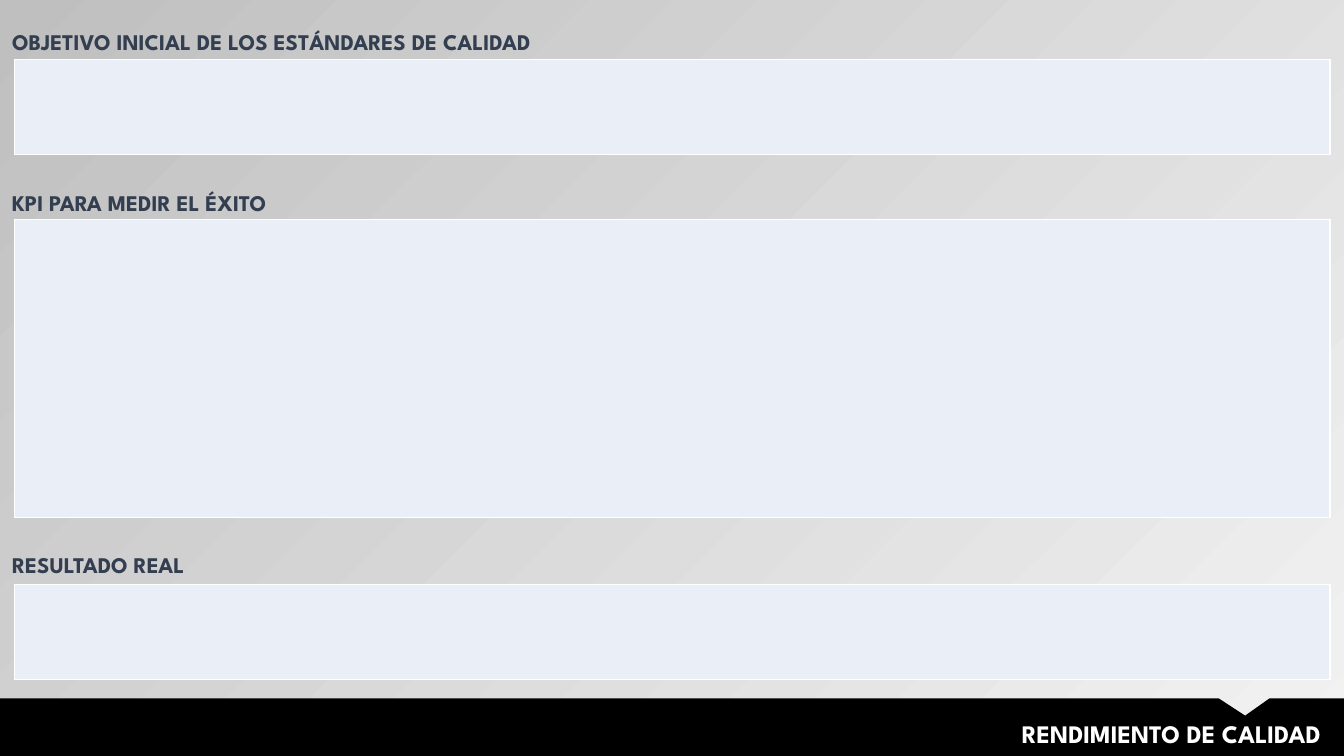
from pptx import Presentation
from pptx.dml.color import RGBColor
from pptx.enum.text import MSO_AUTO_SIZE, PP_ALIGN
from pptx.oxml import parse_xml
from pptx.oxml.ns import nsdecls
from pptx.util import Inches, Pt

FONT = "League Spartan"
BLACK, WHITE, SLATE, PALE = "000000", "FFFFFF", "333F50", "EAEFF7"
BACKGROUND = ["F2F2F2", "BFBFBF"]
TITLE = "RENDIMIENTO DE CALIDAD"
SECTIONS = [
    ("OBJETIVO INICIAL DE LOS ESTÁNDARES DE CALIDAD", 0.19, 5.58, 0.59, 0.94),
    ("KPI PARA MEDIR EL ÉXITO", 1.78, 5.31, 2.18, 2.95),
    ("RESULTADO REAL", 5.38, 3.37, 5.8, 0.94),
]
BANNER = [(0, 6.93), (12.09, 6.93), (12.35, 7.1), (12.59, 6.93),
          (13.33, 6.93), (13.33, 7.5), (0, 7.5)]
BOX_LEFT, BOX_WIDTH = 0.14, 13.05


def rgb(value):
    return RGBColor.from_string(value)


def add_banner(s):
    points = [(Inches(x), Inches(y)) for x, y in BANNER]
    builder = s.shapes.build_freeform(*points[0])
    builder.add_line_segments(points[1:], close=True)
    sp = builder.convert_to_shape()
    sp.shadow.inherit = False
    sp.fill.solid()
    sp.fill.fore_color.rgb = rgb(BLACK)
    sp.line.fill.background()


def add_text(s, text, left, top, width, size, color):
    sp = s.shapes.add_textbox(Inches(left), Inches(top), Inches(width), Inches(0.4))
    tf = sp.text_frame
    tf.word_wrap = True
    tf.auto_size = MSO_AUTO_SIZE.SHAPE_TO_FIT_TEXT
    p = tf.paragraphs[0]
    p.text = text
    p.font.name, p.font.size, p.font.bold = FONT, Pt(size), True
    p.font.color.rgb = rgb(color)
    return tf


def add_heading(s, text, top, width):
    tf = add_text(s, text, 0, top, width, 16, SLATE)
    tf.margin_left = tf.margin_right = Inches(0.12)
    tf.margin_top = tf.margin_bottom = Inches(0.06)
    p = tf.paragraphs[0]
    p.line_spacing = Pt(21.5)
    p.space_before = Pt(3.2)


def add_box(s, top, height):
    frame = s.shapes.add_table(1, 1, Inches(BOX_LEFT), Inches(top),
                               Inches(BOX_WIDTH), Inches(height))
    frame.table.first_row = frame.table.horz_banding = False
    cell = frame.table.cell(0, 0)
    tcPr = cell._tc.get_or_add_tcPr()
    for side in ("lnL", "lnR", "lnT", "lnB"):
        tcPr.append(parse_xml(
            f'<a:{side} {nsdecls("a")} w="{Pt(1)}"><a:solidFill>'
            f'<a:srgbClr val="{WHITE}"/></a:solidFill></a:{side}>'))
    cell.fill.solid()
    cell.fill.fore_color.rgb = rgb(PALE)


def main():
    prs = Presentation()
    prs.slide_width, prs.slide_height = Inches(13.33), Inches(7.5)
    s = prs.slides.add_slide(prs.slide_layouts[6])
    fill = s.background.fill
    fill.gradient()
    fill.gradient_angle = 135
    for stop, color in zip(fill.gradient_stops, BACKGROUND):
        stop.color.rgb = rgb(color)

    add_banner(s)
    tf = add_text(s, TITLE, 4.14, 7.08, 9.06, 18, WHITE)
    tf.paragraphs[0].alignment = PP_ALIGN.RIGHT
    for text, text_top, text_width, box_top, box_height in SECTIONS:
        add_box(s, box_top, box_height)
        add_heading(s, text, text_top, text_width)
    prs.save("out.pptx")


if __name__ == "__main__":
    main()
